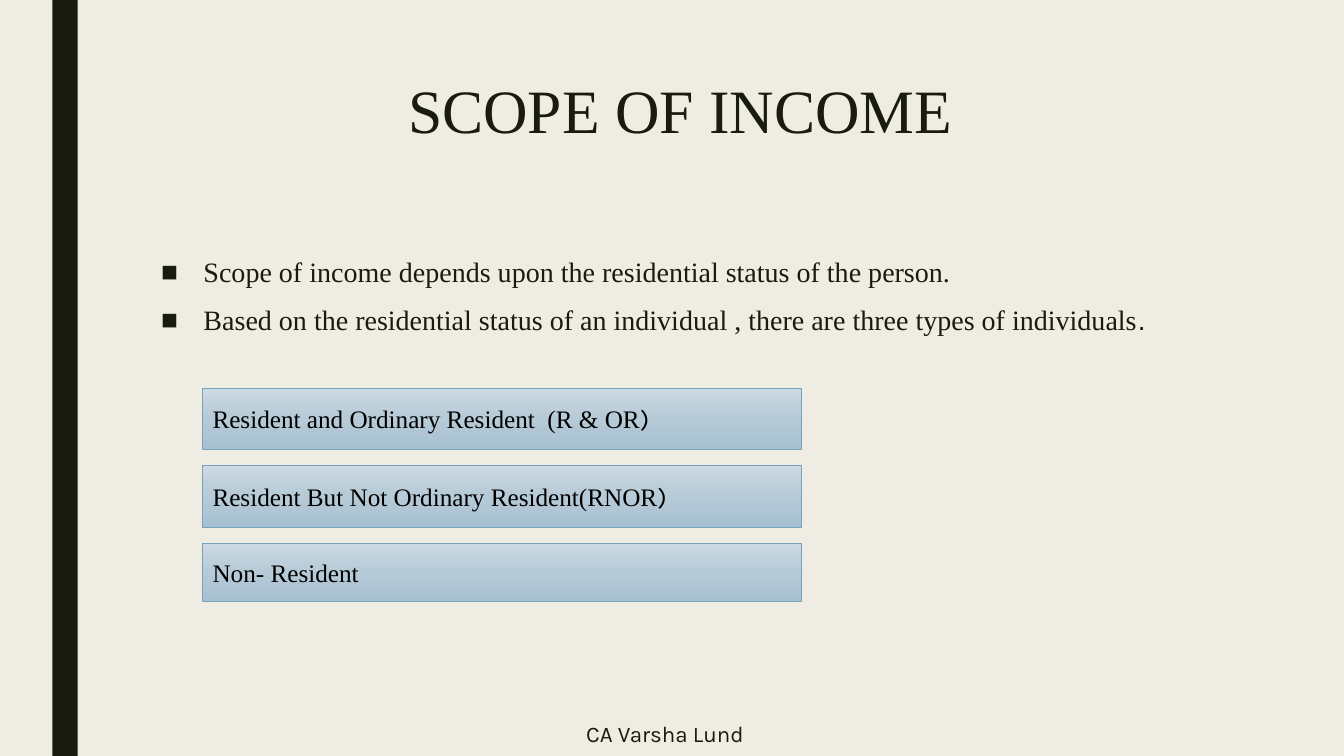
from copy import deepcopy
from dataclasses import dataclass

from lxml.etree import SubElement
from pptx import Presentation
from pptx.dml.color import RGBColor as Rgb
from pptx.enum.shapes import MSO_SHAPE as Kind
from pptx.enum.text import MSO_ANCHOR as Anchor, PP_ALIGN as Align
from pptx.oxml.ns import qn
from pptx.util import Emu, Inches, Pt


@dataclass(frozen=True)
class Theme:
    paper: str = "EFEDE3"
    ink: str = "191B0E"
    black: str = "000000"
    edge: str = "77A2BB"
    fade: tuple = ("CCDAE3", "B6CAD7", "A7C1D2")
    serif: str = "Times New Roman"
    sans: str = "Karla"
    plain: str = "Arial"
    head: int = 44
    body: int = 20
    label: int = 18
    foot: int = 16


T = Theme()

# Each line is a list of (text, font) runs.
TITLE = [[("SCOPE OF INCOME", T.serif)]]
POINTS = [
    [("Scope of income depends upon the residential status of the person.", T.serif)],
    [("Based on the residential status of an individual , "
      "there are three types of individuals", T.serif), (".", T.plain)],
]
TYPES = [
    ([("Resident and Ordinary Resident  (R & OR", T.serif), (")", T.sans)], 0.61),
    ([("Resident But Not Ordinary Resident(RNOR", T.serif), (")", T.sans)], 0.61),
    ([("Non- Resident", T.serif)], 0.58),
]
FOOTER = [[("CA Varsha Lund", T.sans)]]

WIDE, HIGH = 13.33, 7.5
LEFT, SPAN = 1.5, 10.5      # main column
BAR_X, BAR_Y, BAR_W, GAP = 2.01, 3.85, 5.94, 0.16
INDENT = 0.42


def box(*sides):
    return [Inches(side) for side in sides]


def write(shape, lines, size, color=T.ink, align=Align.LEFT,
          anchor=Anchor.TOP, spacing=None, before=0, after=0, bullet=None):
    frame = shape.text_frame
    frame.word_wrap = True
    frame.vertical_anchor = anchor
    for i, line in enumerate(lines):
        para = frame.add_paragraph() if i else frame.paragraphs[0]
        para.alignment = align
        para.line_spacing = spacing
        para.space_before, para.space_after = Pt(before), Pt(after)
        for text, font in line:
            run = para.add_run()
            run.text = text
            run.font.name, run.font.size = font, Pt(size)
            run.font.color.rgb = Rgb.from_string(color)
        if bullet:
            props = para._p.get_or_add_pPr()
            props.set("marL", str(Inches(INDENT)))
            props.set("indent", str(-Inches(INDENT)))
            SubElement(props, qn("a:buFont")).set("typeface", T.plain)
            SubElement(props, qn("a:buChar")).set("char", bullet)


def rect(slide, *sides):
    shape = slide.shapes.add_shape(Kind.RECTANGLE, *box(*sides))
    shape.shadow.inherit = False
    return shape


def shade(shape):
    """Fill from top to bottom with the three theme tones."""
    fill = shape.fill
    fill.gradient()
    fill.gradient_angle = 270
    first = shape._element.spPr.find(".//" + qn("a:gs"))
    first.addnext(deepcopy(first))
    for stop, tone, place in zip(fill.gradient_stops, T.fade, (0, 0.5, 1)):
        stop.color.rgb = Rgb.from_string(tone)
        stop.position = place


def main():
    deck = Presentation()
    deck.slide_width, deck.slide_height = box(WIDE, HIGH)
    slide = deck.slides.add_slide(deck.slide_layouts[5])
    back = slide.background.fill
    back.solid()
    back.fore_color.rgb = Rgb.from_string(T.paper)

    stripe = rect(slide, 0.52, 0, 0.25, HIGH)
    stripe.fill.solid()
    stripe.fill.fore_color.rgb = Rgb.from_string(T.ink)
    stripe.line.fill.background()

    title = slide.shapes.title
    title.left, title.top, title.width, title.height = box(LEFT, 0.75, SPAN, 1.62)
    write(title, TITLE, T.head, align=Align.CENTER, spacing=0.89)

    body = slide.shapes.add_textbox(*box(LEFT, 2.5, SPAN, 3.92))
    write(body, POINTS, T.body, align=Align.JUSTIFY, spacing=0.94,
          before=10, after=2, bullet="■")

    top = BAR_Y
    for line, tall in TYPES:
        bar = rect(slide, BAR_X, top, BAR_W, tall)
        shade(bar)
        bar.line.color.rgb = Rgb.from_string(T.edge)
        bar.line.width = Pt(0.5)
        write(bar, [line], T.label, color=T.black, anchor=Anchor.MIDDLE)
        top += tall + GAP

    foot = slide.shapes.add_textbox(*box(3.16, 7.06, 6.87, 0.44))
    write(foot, FOOTER, T.foot, align=Align.CENTER, anchor=Anchor.MIDDLE)
    deck.save("out.pptx")


if __name__ == "__main__":
    main()
